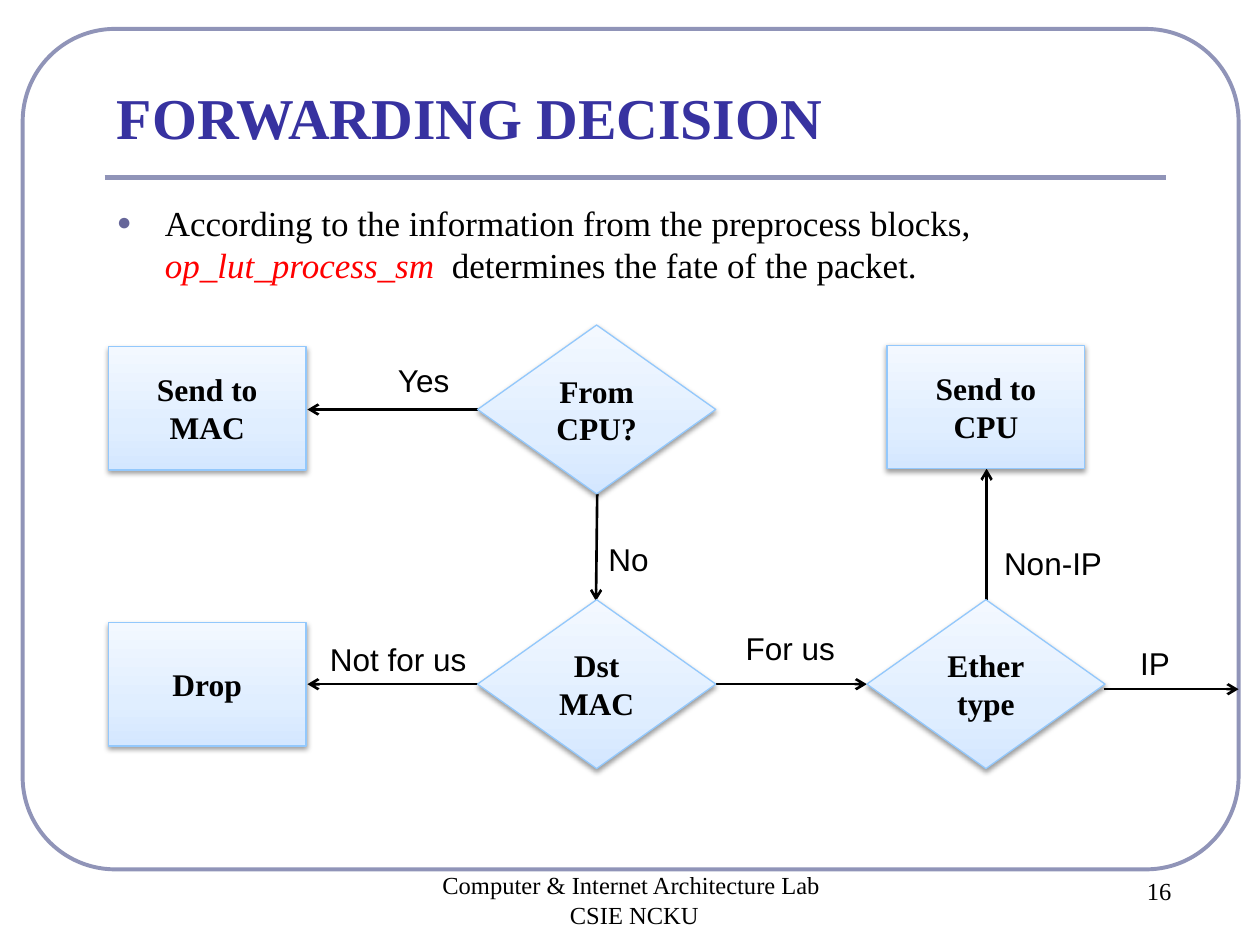
from pptx import Presentation
from pptx.dml.color import RGBColor
from pptx.enum.shapes import MSO_CONNECTOR, MSO_SHAPE
from pptx.enum.text import MSO_ANCHOR, MSO_AUTO_SIZE, PP_ALIGN
from pptx.oxml import parse_xml
from pptx.oxml.ns import nsdecls
from pptx.util import Inches, Pt

COLORS = {
    "frame": "9094B8", "title": "3732A0", "text": "000000", "accent": "FF0000",
    "bullet": "666699", "node_line": "93C8FC", "shadow": "000000",
}
NODE_GRADIENT = [(0, "D4E7FF"), (35, "E0EEFF"), (100, "F3F8FF")]

SERIF = {"name": "Times New Roman", "color": "text"}
TITLE = {**SERIF, "size": 33, "bold": True, "color": "title"}
BODY = {**SERIF, "size": 20}
FOOTER = {**SERIF, "size": 14}
NODE = {**SERIF, "size": 18, "bold": True}
LABEL = {"name": "Arial", "size": 18, "color": "text"}

DIAMOND = (MSO_SHAPE.DIAMOND, 1.89, 1.34)
BOX = (MSO_SHAPE.RECTANGLE, 1.57, 0.98)


def rgb(key):
    return RGBColor.from_string(COLORS[key])


def style_font(font, values):
    for key, value in values.items():
        if key == "color":
            font.color.rgb = rgb(value)
        else:
            setattr(font, key, Pt(value) if key == "size" else value)


def write_lines(frame, text, values, align=None):
    """One paragraph per line; a vertical tab is a line break."""
    frame.text = text
    for paragraph in frame.paragraphs:
        if align is not None:
            paragraph.alignment = align
        for run in paragraph.runs:
            style_font(run.font, values)


def add_text_box(slide, left, top, width, height, **frame_values):
    box = slide.shapes.add_textbox(*map(Inches, (left, top, width, height)))
    for key, value in {"word_wrap": True, **frame_values}.items():
        setattr(box.text_frame, key, value)
    return box.text_frame


def add_line(slide, start, end, color, width, arrow=False):
    line = slide.shapes.add_connector(
        MSO_CONNECTOR.STRAIGHT, *map(Inches, (*start, *end)))
    line.line.color.rgb = rgb(color)
    line.line.width = Pt(width)
    if arrow:
        line.line._get_or_add_ln().append(
            parse_xml(f'<a:tailEnd {nsdecls("a")} type="arrow"/>'))
    line._element.spPr.append(parse_xml(f'<a:effectLst {nsdecls("a")}/>'))


def add_frame(slide):
    frame = slide.shapes.add_shape(
        MSO_SHAPE.ROUNDED_RECTANGLE, *map(Inches, (0.18, 0.23, 9.65, 6.67)))
    frame.adjustments[0] = 0.11
    frame.shadow.inherit = False
    frame.fill.background()
    frame.line.color.rgb = rgb("frame")
    frame.line.width = Pt(2.25)


def add_bullet(paragraph):
    properties = paragraph._p.get_or_add_pPr()
    properties.set("marL", str(Inches(0.38)))
    properties.set("indent", str(-Inches(0.38)))
    for tag in (f'buClr {nsdecls("a")}><a:srgbClr val="{COLORS["bullet"]}"/></a:buClr',
                f'buSzPct {nsdecls("a")} val="70000"/',
                f'buFont {nsdecls("a")} typeface="Arial"/',
                f'buChar {nsdecls("a")} char="●"/'):
        properties.append(parse_xml(f"<a:{tag}>"))


def add_node(slide, kind, left, top, text):
    preset, width, height = kind
    node = slide.shapes.add_shape(
        preset, *map(Inches, (left, top, width, height)))
    properties = node._element.spPr

    # Three-stop gradient, running upwards
    stops = "".join(
        f'<a:gs pos="{position * 1000}"><a:srgbClr val="{color}"/></a:gs>'
        for position, color in NODE_GRADIENT)
    properties.insert(2, parse_xml(
        f'<a:gradFill {nsdecls("a")} rotWithShape="1"><a:gsLst>{stops}</a:gsLst>'
        '<a:lin ang="16200000" scaled="0"/></a:gradFill>'))
    node.line.color.rgb = rgb("node_line")
    node.line.width = Pt(0.75)

    # Soft shadow below
    node.shadow.inherit = False
    properties.effectLst.append(parse_xml(
        f'<a:outerShdw {nsdecls("a")} blurRad="{Pt(3.1)}" dist="{Pt(1.6)}" '
        f'dir="5400000" rotWithShape="0"><a:srgbClr val="{COLORS["shadow"]}">'
        '<a:alpha val="38000"/></a:srgbClr></a:outerShdw>'))

    node.text_frame.word_wrap = True
    node.text_frame.vertical_anchor = MSO_ANCHOR.MIDDLE
    write_lines(node.text_frame, text, NODE, PP_ALIGN.CENTER)


def add_label(slide, left, top, width, text):
    frame = add_text_box(slide, left, top, width, 0.4, word_wrap=False,
                         auto_size=MSO_AUTO_SIZE.SHAPE_TO_FIT_TEXT)
    write_lines(frame, text, LABEL)


def add_body(slide):
    paragraph = add_text_box(slide, 0.83, 1.55, 8.42, 4.8).paragraphs[0]
    paragraph.space_before = Pt(4)
    add_bullet(paragraph)
    for text, extra in [
        ("According to the information from the preprocess blocks, ", {}),
        ("op_lut_process_sm ", {"color": "accent", "italic": True}),
        (" determines the fate of the packet.", {}),
    ]:
        run = paragraph.add_run()
        run.text = text
        style_font(run.font, {**BODY, **extra})


def main():
    presentation = Presentation()
    presentation.slide_width, presentation.slide_height = Inches(10), Inches(7.5)
    slide = presentation.slides.add_slide(presentation.slide_layouts[6])

    # Frame, title and body
    add_frame(slide)
    add_line(slide, (0.83, 1.41), (9.25, 1.41), "frame", 3)
    title = add_text_box(slide, 0.83, 0.6, 8.42, 0.65,
                         vertical_anchor=MSO_ANCHOR.BOTTOM)
    write_lines(title, "FORWARDING DECISION", TITLE)
    add_body(slide)

    # Footer and page number
    for area, text in [
        ((2.87, 6.86, 4.33, 0.5), "Computer & Internet Architecture Lab \nCSIE NCKU"),
        ((8.66, 6.9, 1.08, 0.5), "16"),
    ]:
        write_lines(add_text_box(slide, *area), text, FOOTER, PP_ALIGN.CENTER)

    # Flow arrows
    for start, end in [
        ((3.79, 3.25), (2.44, 3.25)), ((4.74, 3.92), (4.73, 4.77)),
        ((3.79, 5.43), (2.44, 5.43)), ((5.68, 5.43), (6.88, 5.43)),
        ((7.83, 4.76), (7.83, 3.72)), ((8.76, 5.47), (9.83, 5.47)),
    ]:
        add_line(slide, start, end, "text", 1.5, arrow=True)

    # Decisions and outcomes
    for node in [
        (DIAMOND, 3.79, 2.58, "From CPU?"), (BOX, 0.86, 2.75, "Send to MAC"),
        (DIAMOND, 3.79, 4.76, "Dst MAC"), (BOX, 0.86, 4.94, "Drop"),
        (DIAMOND, 6.88, 4.76, "Ether\vtype"), (BOX, 7.04, 2.74, "Send to CPU"),
    ]:
        add_node(slide, *node)

    # Branch labels
    for label in [
        (3.06, 2.82, 0.61, "Yes"), (4.73, 4.24, 0.52, "No"),
        (2.52, 5.03, 1.3, "Not for us"), (7.87, 4.27, 0.99, "Non-IP"),
        (8.95, 5.06, 0.44, "IP"), (5.82, 4.94, 0.92, "For us"),
    ]:
        add_label(slide, *label)

    presentation.save("out.pptx")


if __name__ == "__main__":
    main()
